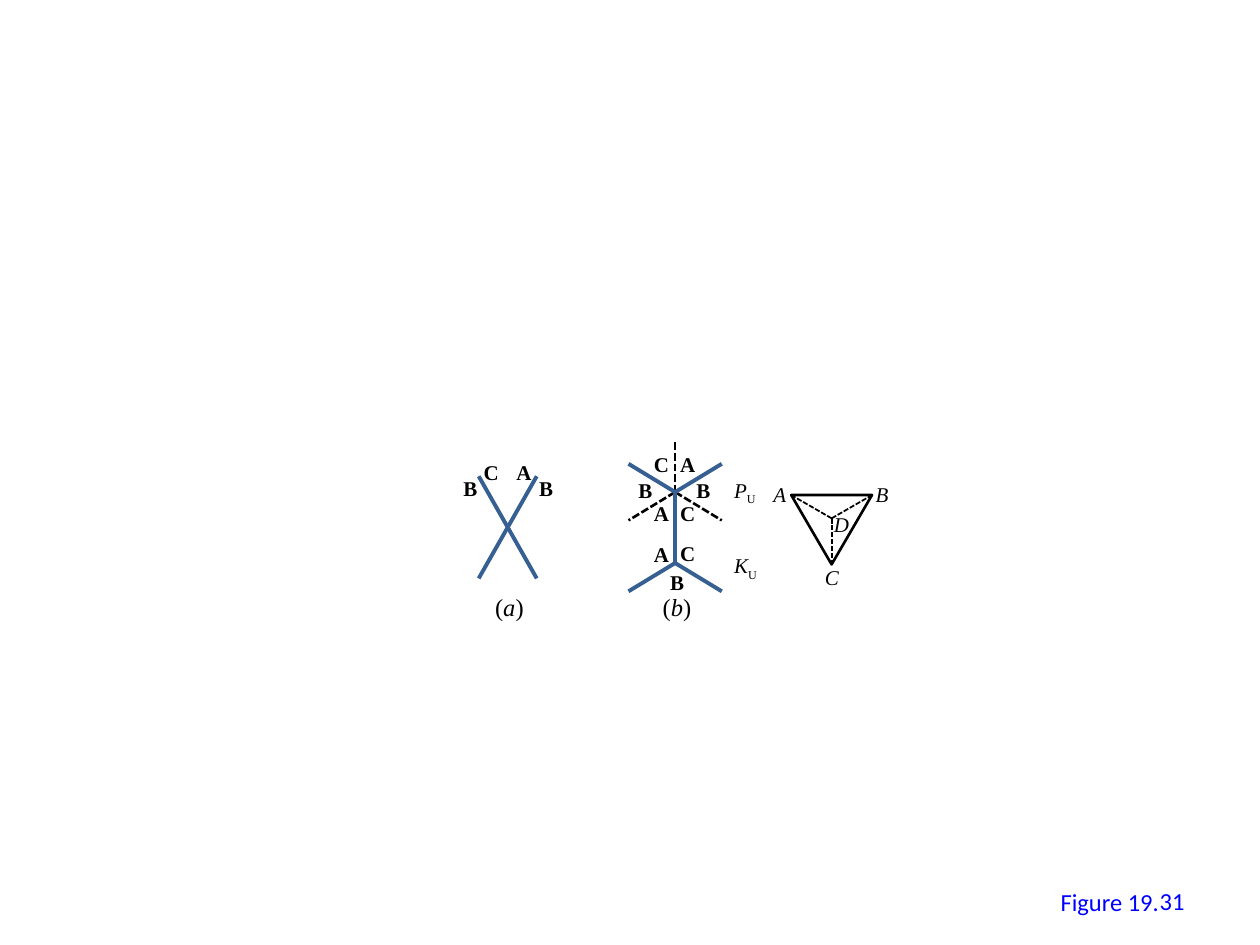
"""Build the slide of Figure 19.31: crossing lines and their labelled regions."""
from pptx import Presentation
from pptx.dml.color import RGBColor
from pptx.enum.dml import MSO_LINE
from pptx.enum.shapes import MSO_CONNECTOR, MSO_SHAPE
from pptx.enum.text import MSO_ANCHOR, PP_ALIGN
from pptx.oxml.ns import qn
from pptx.util import Cm, Pt
from lxml import etree

STRAIGHT = MSO_CONNECTOR.STRAIGHT
TRIANGLE = MSO_SHAPE.ISOSCELES_TRIANGLE
DASH = MSO_LINE.SQUARE_DOT
LEFT, RIGHT = PP_ALIGN.LEFT, PP_ALIGN.RIGHT
TOP, MIDDLE = MSO_ANCHOR.TOP, MSO_ANCHOR.MIDDLE
BLACK, STEEL, BLUE = "000000", "376092", "0000FF"
SERIF, SANS = "Times New Roman", "Calibri"

REGIONS = [
    ("B", 9.09, 9.47), ("B", 10.62, 9.47), ("A", 10.16, 9.14), ("C", 9.5, 9.14),
    ("C", 12.93, 8.97), ("A", 13.46, 8.97), ("B", 12.62, 9.5), ("B", 13.79, 9.5),
    ("A", 12.93, 9.96), ("C", 13.46, 9.96),
    ("A", 12.93, 10.8), ("C", 13.46, 10.77), ("B", 13.26, 11.35),
]
VERTICES = [("A", 15.34, 9.58), ("B", 17.4, 9.58), ("C", 16.38, 11.25), ("D", 16.56, 10.19)]
POINTS = [("P", 14.55, 9.5), ("K", 14.55, 11.02)]
CAPTIONS = [("a", 9.73, 11.81), ("b", 13.11, 11.81)]

CROSS_LEFT, CROSS_RIGHT, CROSS_TOP, CROSS_BOTTOM = 9.65, 10.82, 9.6, 11.66
AXIS, UPPER, LOWER, STEM_TOP = 13.61, 9.92, 11.35, 8.92
ARM_RUN, ARM_RISE = 0.94, 0.57
TRI_LEFT, TRI_TOP, TRI_WIDTH, TRI_HEIGHT = 15.95, 9.98, 1.63, 1.4
HUB = (TRI_LEFT + TRI_WIDTH / 2, 10.45)
CORNERS = [(TRI_LEFT, TRI_TOP), (TRI_LEFT + TRI_WIDTH, TRI_TOP), (HUB[0], TRI_TOP + TRI_HEIGHT)]

prs = Presentation()
prs.slide_width, prs.slide_height = Cm(25.4), Cm(19.05)
slide = prs.slides.add_slide(prs.slide_layouts[6])


def rgb(code):
    return RGBColor.from_string(code)


def add_text(runs, left, top, width, height=0.76, size=12, font=SERIF, color=BLACK,
             wrap=False, align=LEFT, anchor=TOP):
    frame = slide.shapes.add_textbox(Cm(left), Cm(top), Cm(width), Cm(height)).text_frame
    frame.word_wrap, frame.vertical_anchor = wrap, anchor
    paragraph = frame.paragraphs[0]
    paragraph.alignment = align
    for text, style in runs:
        run = paragraph.add_run()
        run.text = text
        run.font.name, run.font.size = font, Pt(size)
        run.font.color.rgb = rgb(color)
        run.font.bold, run.font.italic = style == "bold", style == "italic"
        if style == "sub":
            run._r.get_or_add_rPr().set("baseline", "-25000")


def add_line(start, end, color=STEEL, width=2.25, dash=None):
    line = slide.shapes.add_connector(STRAIGHT, *(Cm(v) for v in (*start, *end)))
    line.line.color.rgb = rgb(color)
    line.line.width = Pt(width)
    line.line.dash_style = dash
    etree.SubElement(line._element.spPr, qn("a:effectLst"))


add_line((CROSS_LEFT, CROSS_TOP), (CROSS_RIGHT, CROSS_BOTTOM))
add_line((CROSS_RIGHT, CROSS_TOP), (CROSS_LEFT, CROSS_BOTTOM))

upper_node, lower_node = (AXIS, UPPER), (AXIS, LOWER)
add_line((AXIS, STEM_TOP), upper_node, BLACK, 1.5, DASH)
for side in (-1, 1):
    arm_x = AXIS + side * ARM_RUN
    add_line(upper_node, (arm_x, UPPER + ARM_RISE), BLACK, 1.5, DASH)
    add_line(upper_node, (arm_x, UPPER - ARM_RISE))
    add_line(lower_node, (arm_x, LOWER + ARM_RISE))
add_line(upper_node, lower_node)

for corner in CORNERS:
    add_line(HUB, corner, BLACK, 1, DASH)
triangle = slide.shapes.add_shape(
    TRIANGLE, Cm(TRI_LEFT), Cm(TRI_TOP), Cm(TRI_WIDTH), Cm(TRI_HEIGHT))
triangle._element.spPr.xfrm.set("flipV", "1")
triangle.shadow.inherit = False
triangle.fill.background()
triangle.line.color.rgb = rgb(BLACK)
triangle.line.width = Pt(1.5)

for letter, left, top in REGIONS:
    add_text([(letter, "bold")], left, top, 0.82)
for letter, left, top in VERTICES:
    add_text([(letter, "italic")], left, top, 0.9)
for letter, left, top in POINTS:
    add_text([(letter, "italic"), ("U", "sub")], left, top, 1.1)
for letter, left, top in CAPTIONS:
    add_text([("(", ""), (letter, "italic"), (")", "")], left, top, 1.09, 0.86, size=14)

add_text([("Figure 19.", "")], 21.13, 17.75, 2.51, 0.86, size=14, font=SANS, color=BLUE)
add_text([("31", "")], 18.21, 17.65, 5.92, 1.02, size=14, font=SANS, color=BLUE,
         wrap=True, align=RIGHT, anchor=MIDDLE)

prs.save("out.pptx")
